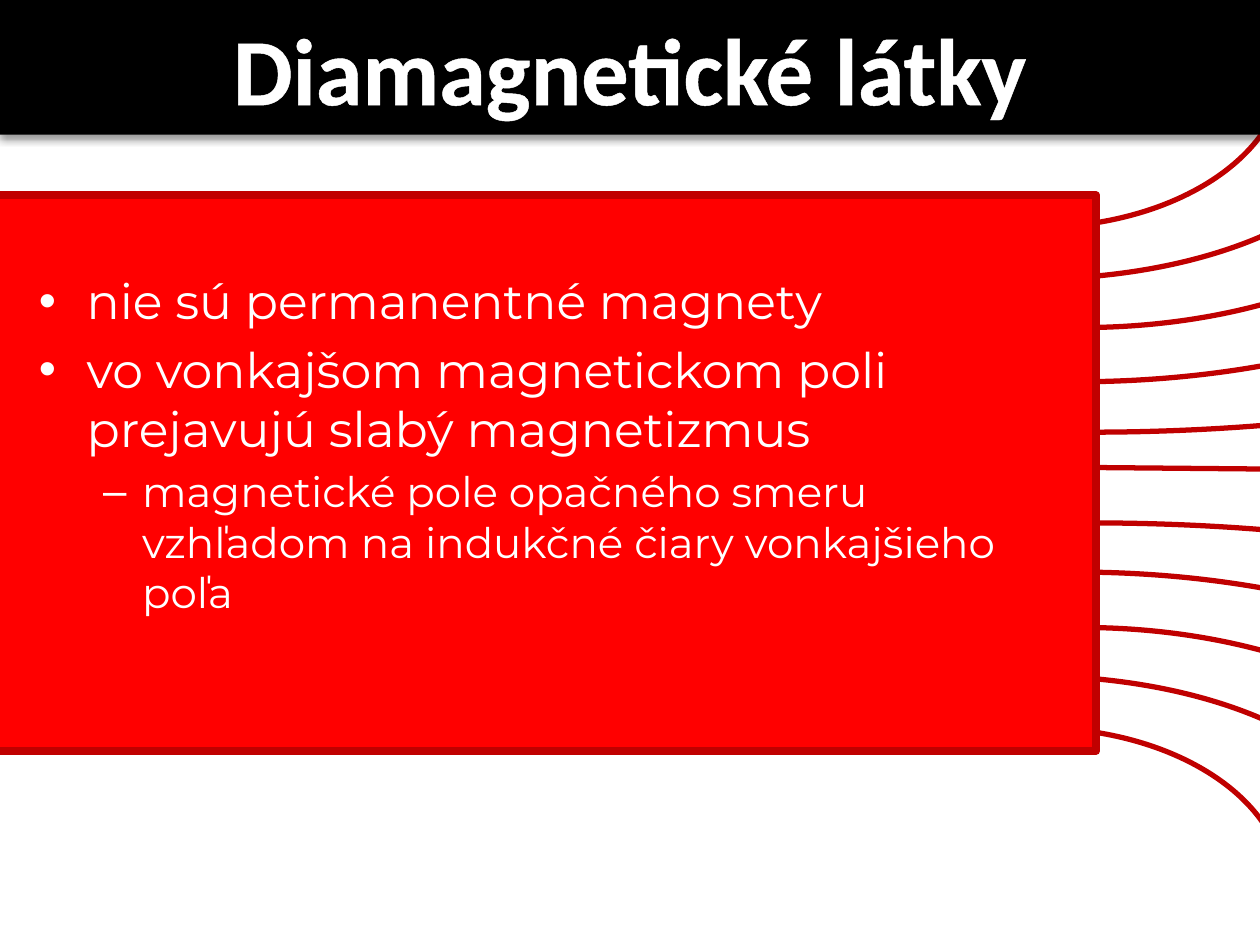
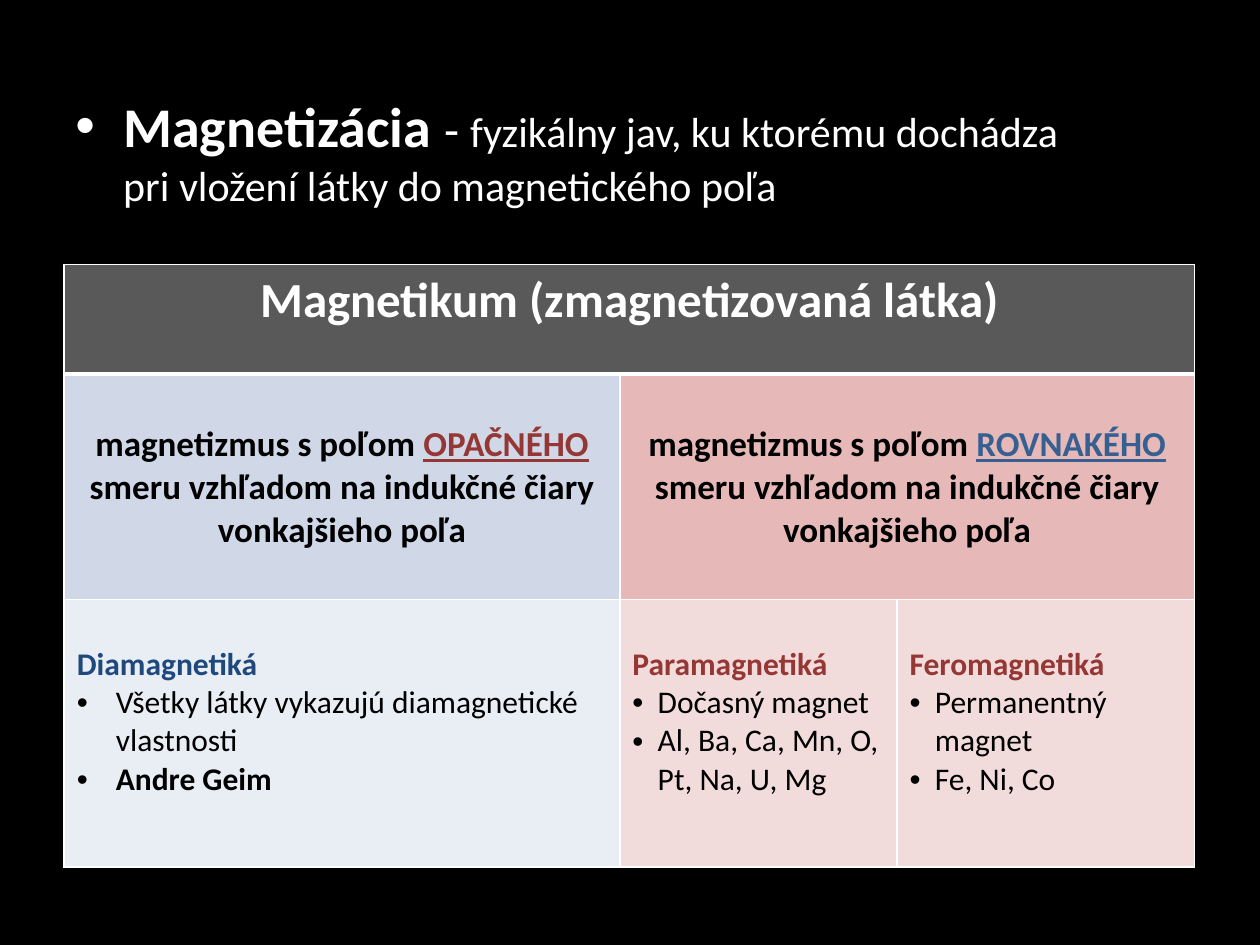
"""Build two slides on diamagnetic substances and magnetization."""
from dataclasses import dataclass

from lxml import etree
from pptx import Presentation
from pptx.dml.color import RGBColor
from pptx.enum.shapes import MSO_CONNECTOR, MSO_SHAPE
from pptx.enum.text import MSO_ANCHOR, PP_ALIGN
from pptx.oxml.ns import qn
from pptx.util import Inches, Pt

RECTANGLE, ARC = MSO_SHAPE.RECTANGLE, MSO_SHAPE.ARC
STRAIGHT = MSO_CONNECTOR.STRAIGHT
TOP, MIDDLE = MSO_ANCHOR.TOP, MSO_ANCHOR.MIDDLE
LEFT, CENTER = PP_ALIGN.LEFT, PP_ALIGN.CENTER


@dataclass(frozen=True)
class Theme:
    """Colours, fonts and type sizes of the slides."""
    white: str = "FFFFFF"
    black: str = "000000"
    panel: str = "FF0000"
    field: str = "C00000"
    header: str = "595959"
    opposite: str = "D0D8E8"
    opposite_light: str = "E9EDF4"
    same: str = "E6B9B8"
    same_light: str = "F2DCDB"
    red_text: str = "953735"
    blue_text: str = "376092"
    navy_text: str = "1F497D"
    font: str = "Calibri"
    panel_font: str = "Montserrat"
    title: int = 54
    term: int = 32
    large: int = 28
    medium: int = 24
    effect: int = 20
    small: int = 18


THEME = Theme()

FIELD_ARCS = [
    (6.95, -1.44, 5.08, 2.55, 3.94),
    (6.79, -1.98, 3.97, 2.8, 5.59),
    (6.68, -2.65, 3.54, 3.81, 6.69),
    (6.18, -3.9, 2.33, 4.72, 9.14),
    (6.3, -5.35, 0.09, 4.72, 12.84),
]


def rgb(color):
    """Turn a hex string into a colour."""
    return RGBColor.from_string(color)


def add_xml(parent, tag, **attributes):
    """Append a drawing element and return it."""
    return etree.SubElement(parent, qn(tag),
                            {key: str(value) for key, value in attributes.items()})


def add_solid(parent, color):
    """Append a solid colour fill and return its colour element."""
    return add_xml(add_xml(parent, "a:solidFill"), "a:srgbClr", val=color)


def add_slide(deck, background):
    """Add a blank slide with a plain background."""
    slide = deck.slides.add_slide(deck.slide_layouts[6])
    slide.background.fill.solid()
    slide.background.fill.fore_color.rgb = rgb(background)
    return slide


def add_run(paragraph, text, size, color, bold=False, underline=False, font=THEME.font):
    """Add one formatted run and return it."""
    run = paragraph.add_run()
    run.text = text
    run.font.size = Pt(size)
    run.font.name = font
    run.font.bold = bold
    run.font.underline = underline
    run.font.color.rgb = rgb(color)
    return run


def set_bullet(paragraph, mark, margin, hanging):
    """Give a paragraph a bullet and a hanging indent."""
    properties = paragraph._p.get_or_add_pPr()
    properties.set("marL", str(Inches(margin)))
    properties.set("indent", str(-Inches(hanging)))
    add_xml(properties, "a:buFont", typeface="Arial")
    add_xml(properties, "a:buChar", char=mark)


def next_paragraph(frame, align=LEFT):
    """Return the unused first paragraph or a new one."""
    first = frame.paragraphs[0]
    paragraph = frame.add_paragraph() if first.runs else first
    paragraph.alignment = align
    return paragraph


def add_box(slide, left, top, width, height, fill, anchor):
    """Add a filled rectangle without a line and return it."""
    box = slide.shapes.add_shape(RECTANGLE, Inches(left), Inches(top),
                                 Inches(width), Inches(height))
    box.shadow.inherit = False
    box.fill.solid()
    box.fill.fore_color.rgb = rgb(fill)
    box.line.fill.background()
    box.text_frame.word_wrap = True
    box.text_frame.vertical_anchor = anchor
    return box


def set_line(line, color, width):
    """Set the colour and width of a line."""
    line.color.rgb = rgb(color)
    line.width = Pt(width)


def add_title_band(slide, text):
    """Add the black title band with its soft shadow."""
    band = add_box(slide, 0, 0, 10, 1.07, THEME.black, MIDDLE)
    effects = band.element.spPr.find(qn("a:effectLst"))
    shadow = add_xml(effects, "a:outerShdw", blurRad=Pt(4), dist=Pt(3),
                     dir=5400000, rotWithShape=0)
    add_xml(add_xml(shadow, "a:srgbClr", val=THEME.black), "a:alpha", val=40000)
    paragraph = next_paragraph(band.text_frame, CENTER)
    run = add_run(paragraph, text, THEME.title, THEME.white, bold=True)
    outline = etree.Element(qn("a:ln"), {"w": str(Pt(1.45))})
    add_solid(outline, THEME.white)
    run.font._element.insert(0, outline)


def add_field_arc(slide, left, top, width, height, lower):
    """Add one curved field line above or below the axis."""
    arc = slide.shapes.add_shape(ARC, Inches(left), Inches(top),
                                 Inches(width), Inches(height))
    arc.shadow.inherit = False
    arc.fill.background()
    set_line(arc.line, THEME.field, 3)
    arc.rotation = 270 if lower else 90
    if lower:
        arc.element.spPr.find(qn("a:xfrm")).set("flipV", "1")


def add_field(slide):
    """Add the mirrored field lines and the line on the axis."""
    for left, upper_top, lower_top, width, height in FIELD_ARCS:
        add_field_arc(slide, left, upper_top, width, height, lower=False)
        add_field_arc(slide, left, lower_top, width, height, lower=True)
    axis = slide.shapes.add_connector(STRAIGHT, Inches(8.62), Inches(3.71),
                                      Inches(13.11), Inches(3.75))
    set_line(axis.line, THEME.field, 3)
    add_xml(axis.element.spPr, "a:effectLst")


def add_property_panel(slide, properties):
    """Add the red panel with bullets on two levels."""
    panel = add_box(slide, -0.2, 1.55, 8.9, 4.41, THEME.panel, TOP)
    set_line(panel.line, THEME.field, 4.5)
    panel.text_frame.margin_top = Inches(0.6)
    levels = [("•", 0.79, 0.38, THEME.large), ("–", 1.23, 0.31, THEME.medium)]
    for index, (level, text) in enumerate(properties):
        mark, margin, hanging, size = levels[level]
        paragraph = next_paragraph(panel.text_frame)
        paragraph.level = level
        set_bullet(paragraph, mark, margin, hanging)
        if index:
            paragraph.space_before = Pt(size * 0.2)
        add_run(paragraph, text, size, THEME.white, font=THEME.panel_font)


def add_definition(slide):
    """Add the definition of magnetization."""
    definition = slide.shapes.add_textbox(Inches(0.5), Inches(0.68),
                                          Inches(9), Inches(6.02))
    definition.text_frame.word_wrap = True
    paragraph = next_paragraph(definition.text_frame)
    set_bullet(paragraph, "•", 0.38, 0.38)
    add_run(paragraph, "Magnetizácia ", THEME.term, THEME.white, bold=True)
    add_run(paragraph, "- ", THEME.large, THEME.white)
    add_run(paragraph, "fyzikálny jav, ku ktorému dochádza", THEME.medium, THEME.white)
    paragraph.add_line_break()
    add_run(paragraph, "pri vložení látky do magnetického poľa", THEME.medium, THEME.white)


def style_cell(cell, fill, top_line=1, bottom_line=1):
    """Set the borders and fill of a table cell."""
    properties = cell._tc.get_or_add_tcPr()
    borders = {"a:lnL": 1, "a:lnR": 1, "a:lnT": top_line, "a:lnB": bottom_line}
    for tag, width in borders.items():
        add_solid(add_xml(properties, tag, w=Pt(width)), THEME.white)
    cell.fill.solid()
    cell.fill.fore_color.rgb = rgb(fill)


def fill_effect(cell, direction, color):
    """Write the direction of the induced field into a cell."""
    cell.margin_top = Inches(0.39)
    paragraph = next_paragraph(cell.text_frame, CENTER)
    add_run(paragraph, "magnetizmus s poľom ", THEME.effect, THEME.black, bold=True)
    add_run(paragraph, direction, THEME.effect, color, bold=True, underline=True)
    add_run(paragraph, " smeru vzhľadom na indukčné čiary vonkajšieho poľa",
            THEME.effect, THEME.black, bold=True)


def fill_group(cell, name, color, indent, facts):
    """Write a group of substances and its facts into a cell."""
    cell.margin_top = Inches(0.36)
    add_run(next_paragraph(cell.text_frame), name, THEME.small, color, bold=True)
    for fact, bold in facts:
        paragraph = next_paragraph(cell.text_frame)
        set_bullet(paragraph, "•", indent, indent)
        add_run(paragraph, fact, THEME.small, THEME.black, bold=bold)


def add_magnetics_table(slide):
    """Add the table that sorts magnetized substances."""
    table = slide.shapes.add_table(3, 3, Inches(0.51), Inches(2.1),
                                   Inches(8.97), Inches(4.78)).table
    table.first_row = table.horz_banding = False
    for column, width in zip(table.columns, (4.41, 2.2, 2.36)):
        column.width = Inches(width)
    for row, height in zip(table.rows, (0.87, 1.79, 2.12)):
        row.height = Inches(height)

    fills = [
        [THEME.header] * 3,
        [THEME.opposite, THEME.same, THEME.same],
        [THEME.opposite_light, THEME.same_light, THEME.same_light],
    ]
    row_lines = [(1, 3), (3, 1), (1, 1)]
    for row, (row_fills, lines) in enumerate(zip(fills, row_lines)):
        for column, fill in enumerate(row_fills):
            style_cell(table.cell(row, column), fill, *lines)
    table.cell(0, 0).merge(table.cell(0, 2))
    table.cell(1, 1).merge(table.cell(1, 2))

    heading = next_paragraph(table.cell(0, 0).text_frame, CENTER)
    add_run(heading, "Magnetikum (zmagnetizovaná látka)", THEME.large,
            THEME.white, bold=True)
    fill_effect(table.cell(1, 0), "OPAČNÉHO", THEME.red_text)
    fill_effect(table.cell(1, 1), "ROVNAKÉHO", THEME.blue_text)
    groups = [
        ("Diamagnetiká", THEME.navy_text, 0.31,
         [("Všetky látky vykazujú diamagnetické vlastnosti", False),
          ("Andre Geim", True)]),
        ("Paramagnetiká", THEME.red_text, 0.2,
         [("Dočasný magnet", False), ("Al, Ba, Ca, Mn, O, Pt, Na, U, Mg", False)]),
        ("Feromagnetiká", THEME.red_text, 0.2,
         [("Permanentný magnet", False), ("Fe, Ni, Co", False)]),
    ]
    for column, group in enumerate(groups):
        fill_group(table.cell(2, column), *group)


def main():
    """Build and save the slides."""
    deck = Presentation()
    deck.slide_width, deck.slide_height = Inches(10), Inches(7.5)

    diamagnetics = add_slide(deck, THEME.white)
    add_field(diamagnetics)
    add_title_band(diamagnetics, "Diamagnetické látky")
    add_property_panel(diamagnetics, [
        (0, "nie sú permanentné magnety"),
        (0, "vo vonkajšom magnetickom poli prejavujú slabý magnetizmus"),
        (1, "magnetické pole opačného smeru vzhľadom na indukčné čiary vonkajšieho poľa"),
    ])

    magnetization = add_slide(deck, THEME.black)
    add_definition(magnetization)
    add_magnetics_table(magnetization)
    deck.save("out.pptx")


if __name__ == "__main__":
    main()
